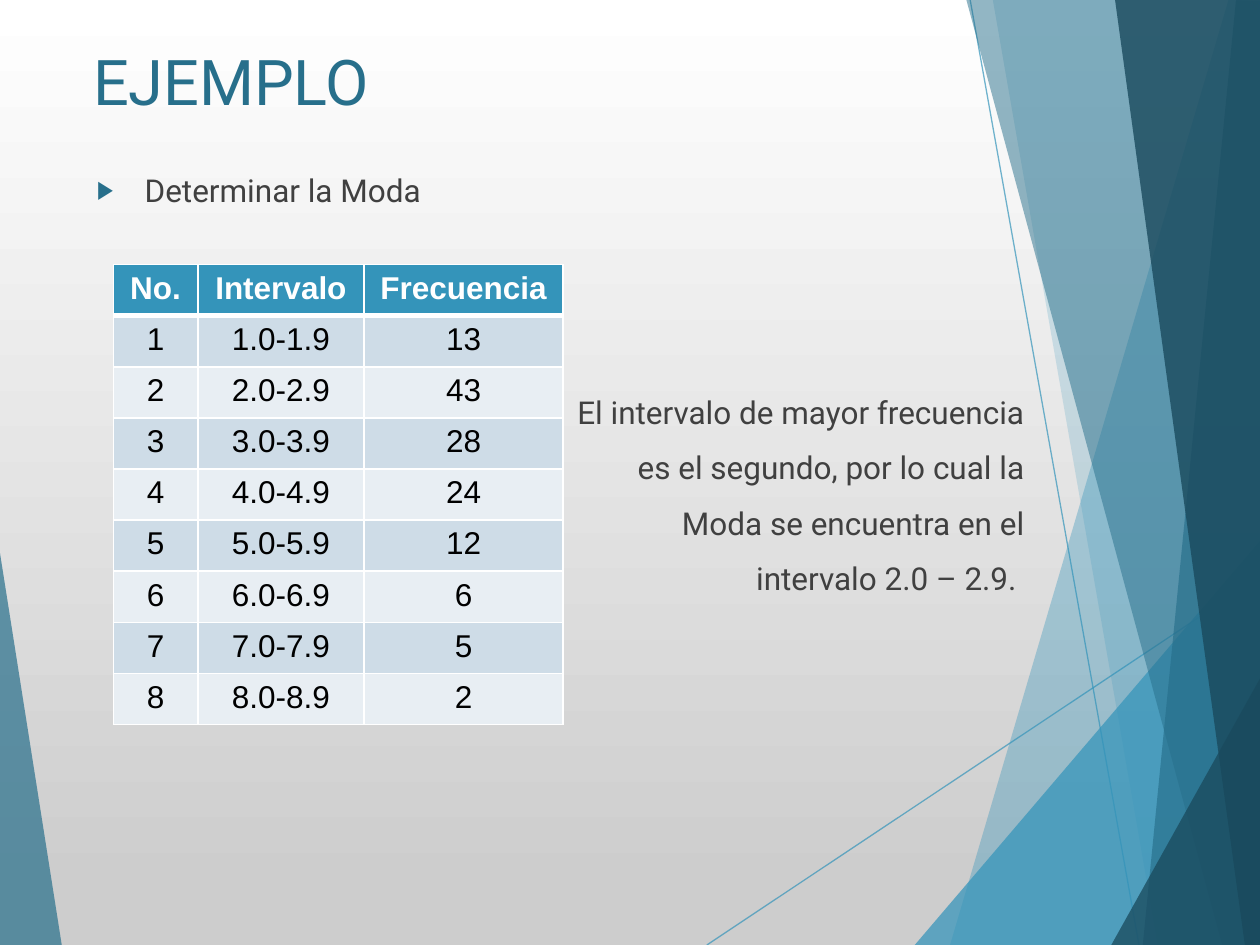
from dataclasses import dataclass

from lxml import etree
from pptx import Presentation
from pptx import util as u
from pptx.dml.color import RGBColor
from pptx.enum import shapes, text
from pptx.oxml.ns import qn

CELL = u.Inches(1)  # the slide is a grid of 10 columns by 7.5 rows
COLUMNS, ROWS = 10, 7.5


@dataclass(frozen=True)
class Theme:
    accent: str = "3494BA"
    deep: str = "276F8B"
    dark: str = "1A4A5D"
    body: str = "404040"
    white: str = "FFFFFF"
    black: str = "000000"
    grey: str = "CDCDCD"
    bands: tuple = ("CEDCE7", "E8EEF3")
    prose_font: str = "Roboto"
    table_font: str = "Arial"
    title_size: int = 36
    text_size: int = 18


@dataclass(frozen=True)
class Box:
    col: float
    row: float
    cols: float
    rows: float

    def emu(self):
        return [grid(n) for n in (self.col, self.row, self.cols, self.rows)]


THEME = Theme()

RAYS = [((5.61, 7.5), (10.01, 4.57)), ((7.7, 0), (9.04, 7.5))]

# outline, colour, opacity in percent
FACETS = [
    ([(9.75, 0), (7.54, 7.5), (10.02, 7.51), (10.01, 0.01)], THEME.accent, 36),
    ([(7.88, 0), (9.19, 7.5), (10.01, 7.5), (10.01, 0)], THEME.accent, 20),
    ([(7.26, 7.5), (10, 4.29), (10.01, 7.5)], THEME.accent, 72),
    ([(7.67, 0), (9.7, 7.5), (10.01, 7.5), (10.01, 0)], THEME.deep, 50),
    ([(9.81, 0), (9.07, 7.5), (10.01, 7.5), (10, 0)], THEME.deep, 66),
    ([(8.85, 0), (9.88, 7.5), (10.02, 7.5), (10, 0)], THEME.dark, 80),
    ([(8.82, 7.5), (10.02, 5.35), (10.02, 7.5)], THEME.dark, 76),
    ([(0, 4.39), (0.49, 7.5), (0, 7.5)], THEME.deep, 70),
]

HEADINGS = ["No.", "Intervalo", "Frecuencia"]
FREQUENCIES = [13, 43, 28, 24, 12, 6, 5, 2]
COLUMN_WIDTHS = [0.67, 1.32, 1.58]

CONCLUSION = [
    "El intervalo de mayor frecuencia",
    "es el segundo, por lo cual la",
    "Moda se encuentra en el",
    "intervalo 2.0 – 2.9. ",
]


def grid(count):
    return round(count * CELL)


def rgb(colour):
    return RGBColor.from_string(colour)


def add_child(parent, tag, **attributes):
    return etree.SubElement(parent, qn(tag), attributes)


def set_opacity(properties, percent):
    for colour in properties.iter(qn("a:srgbClr")):
        add_child(colour, "a:alpha", val=str(percent * 1000))


def write(paragraph, wording, colour, **font_values):
    run = paragraph.add_run()
    run.text = wording
    run.font.color.rgb = rgb(colour)
    for attribute, value in font_values.items():
        setattr(run.font, attribute, value)


def paint_background(slide):
    fill = slide.background.fill
    fill.gradient()
    fill.gradient_angle = 270
    for stop, position, colour in zip(
        fill.gradient_stops, (0, 0.94), (THEME.white, THEME.grey)
    ):
        stop.position = position
        stop.color.rgb = rgb(colour)


def draw_facets(slide, box):
    """Draw the translucent rays and facets, offset by the corner of the box."""
    def place(point):
        return grid(box.col + point[0]), grid(box.row + point[1])

    for start, end in RAYS:
        ray = slide.shapes.add_connector(
            shapes.MSO_CONNECTOR.STRAIGHT, *place(start), *place(end)
        )
        ray.line.color.rgb = rgb(THEME.accent)
        ray.line.width = u.Pt(0.75)
        properties = ray.line._get_or_add_ln().getparent()
        set_opacity(properties, 70)
        add_child(properties, "a:effectLst")

    for outline, colour, opacity in FACETS:
        first, *others = map(place, outline)
        builder = slide.shapes.build_freeform(*first)
        builder.add_line_segments(others, close=True)
        facet = builder.convert_to_shape()
        facet.shadow.inherit = False
        facet.line.fill.background()
        facet.fill.solid()
        facet.fill.fore_color.rgb = rgb(colour)
        set_opacity(facet.element.spPr, opacity)


def add_prose(slide, box, lines, colour, size, **paragraph_values):
    frame = slide.shapes.add_textbox(*box.emu()).text_frame
    frame.word_wrap = True
    for index, line in enumerate(lines):
        paragraph = frame.add_paragraph() if index else frame.paragraphs[0]
        if index:
            paragraph.space_before = u.Pt(10)
        for attribute, value in paragraph_values.items():
            setattr(paragraph, attribute, value)
        write(paragraph, line, colour, name=THEME.prose_font, size=u.Pt(size))
    return frame


def add_task(slide, box):
    frame = add_prose(
        slide, box, ["Determinar la Moda"], THEME.body, THEME.text_size
    )
    properties = frame.paragraphs[0]._p.get_or_add_pPr()
    indent = grid(0.38)
    properties.set("marL", str(indent))
    properties.set("indent", str(-indent))
    add_child(add_child(properties, "a:buClr"), "a:srgbClr", val=THEME.deep)
    add_child(properties, "a:buSzPct", val="80000")
    add_child(properties, "a:buFont", typeface=THEME.table_font)
    add_child(properties, "a:buChar", char="▶")


def set_borders(cell, **points):
    """Draw white borders; points gives the width of each named edge."""
    properties = cell._tc.get_or_add_tcPr()
    for index, edge in enumerate("LRTB"):
        width = u.Pt(points.get(edge, 1))
        line = etree.Element(qn(f"a:ln{edge}"), w=str(int(width)))
        add_child(add_child(line, "a:solidFill"), "a:srgbClr", val=THEME.white)
        properties.insert(index, line)


def add_frequencies(slide, box):
    records = [HEADINGS] + [
        [str(n), f"{n}.0-{n}.9", str(frequency)]
        for n, frequency in enumerate(FREQUENCIES, 1)
    ]
    table = slide.shapes.add_table(
        len(records), len(HEADINGS), *box.emu()
    ).table
    for column, width in zip(table.columns, COLUMN_WIDTHS):
        column.width = grid(width)
    for r, record in enumerate(records):
        heading = r == 0
        fill = THEME.accent if heading else THEME.bands[(r - 1) % 2]
        edges = {0: {"B": 3}, 1: {"T": 3}}.get(r, {})
        for c, wording in enumerate(record):
            cell = table.cell(r, c)
            cell.fill.solid()
            cell.fill.fore_color.rgb = rgb(fill)
            set_borders(cell, **edges)
            paragraph = cell.text_frame.paragraphs[0]
            paragraph.alignment = text.PP_ALIGN.CENTER
            write(paragraph, wording, THEME.white if heading else THEME.black,
                  name=THEME.table_font, size=u.Pt(THEME.text_size), bold=heading)


def main():
    deck = Presentation()
    deck.slide_width, deck.slide_height = grid(COLUMNS), grid(ROWS)
    slide = deck.slides.add_slide(deck.slide_layouts[6])
    paint_background(slide)
    draw_facets(slide, Box(0, 0, COLUMNS, ROWS))
    add_prose(slide, Box(0.64, 0.29, 6.94, 1), ["EJEMPLO"],
              THEME.deep, THEME.title_size)
    add_task(slide, Box(0.67, 1.31, 7.56, 0.5))
    add_prose(slide, Box(0.67, 3.07, 7.56, 1.8), CONCLUSION, THEME.body,
              THEME.text_size, alignment=text.PP_ALIGN.RIGHT)
    add_frequencies(slide, Box(0.9, 2.1, sum(COLUMN_WIDTHS), 3.65))
    deck.save("out.pptx")


if __name__ == "__main__":
    main()
